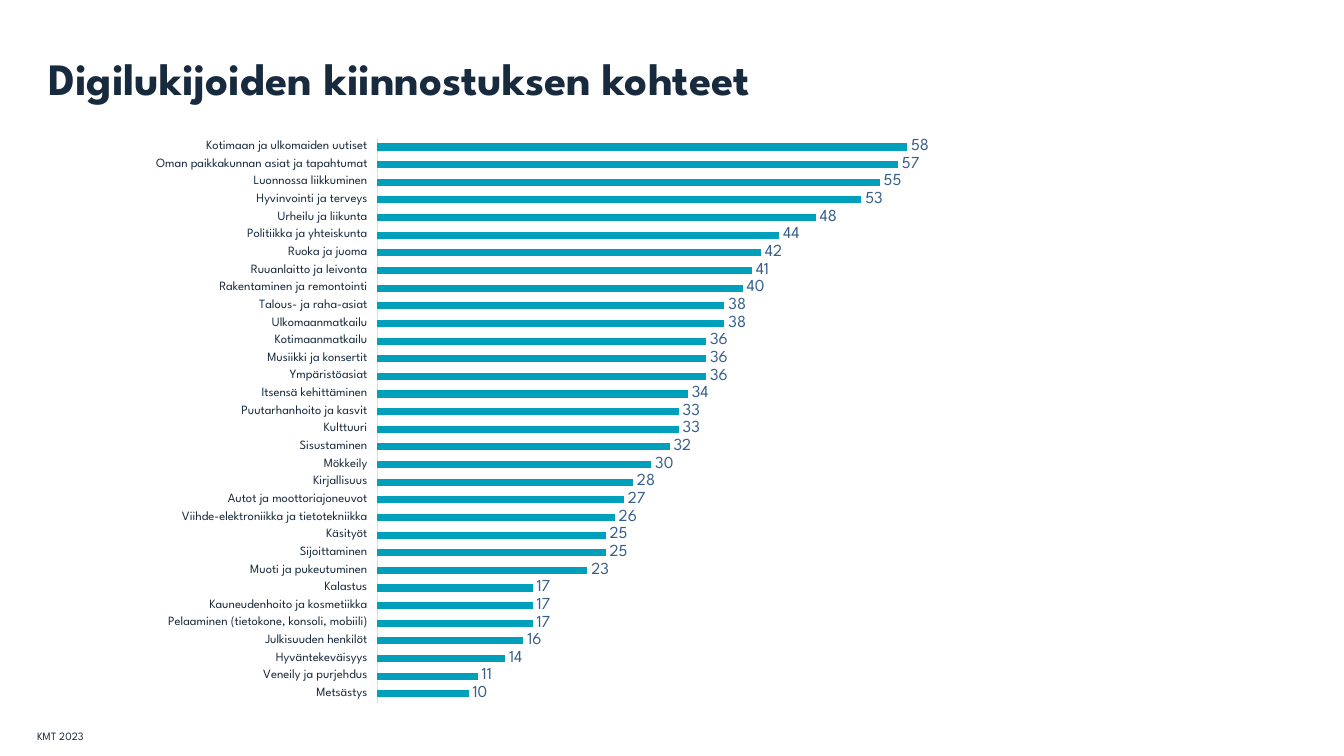
from dataclasses import dataclass

from pptx import Presentation
from pptx.chart.data import CategoryChartData
from pptx.dml.color import RGBColor as RGB
from pptx.enum.chart import (XL_CHART_TYPE as ChartType, XL_LABEL_POSITION as LabelPos,
                             XL_TICK_LABEL_POSITION as TickLabel, XL_TICK_MARK as Tick)
from pptx.enum.text import MSO_ANCHOR as Anchor
from pptx.oxml import parse_xml
from pptx.oxml.ns import nsdecls
from pptx.util import Inches, Pt

WIDTH, HEIGHT = Inches(13.33), Inches(7.5)


@dataclass(frozen=True)
class Theme:
    font: str = "League Spartan"
    ink: str = "182A3D"
    bar: str = "00A0BD"
    value: str = "365E89"
    axis: str = "D1DFED"
    title_size: float = 32
    value_size: float = 12
    chart_size: float = 10
    category_size: float = 9
    source_size: float = 8


THEME = Theme()

INTERESTS = {
    "Kotimaan ja ulkomaiden uutiset": 58,
    "Oman paikkakunnan asiat ja tapahtumat": 57,
    "Luonnossa liikkuminen": 55,
    "Hyvinvointi ja terveys": 53,
    "Urheilu ja liikunta": 48,
    "Politiikka ja yhteiskunta": 44,
    "Ruoka ja juoma": 42,
    "Ruuanlaitto ja leivonta": 41,
    "Rakentaminen ja remontointi": 40,
    "Talous- ja raha-asiat": 38,
    "Ulkomaanmatkailu": 38,
    "Kotimaanmatkailu": 36,
    "Musiikki ja konsertit": 36,
    "Ympäristöasiat": 36,
    "Itsensä kehittäminen": 34,
    "Puutarhanhoito ja kasvit": 33,
    "Kulttuuri": 33,
    "Sisustaminen": 32,
    "Mökkeily": 30,
    "Kirjallisuus": 28,
    "Autot ja moottoriajoneuvot": 27,
    "Viihde-elektroniikka ja tietotekniikka": 26,
    "Käsityöt": 25,
    "Sijoittaminen": 25,
    "Muoti ja pukeutuminen": 23,
    "Kalastus": 17,
    "Kauneudenhoito ja kosmetiikka": 17,
    "Pelaaminen (tietokone, konsoli, mobiili)": 17,
    "Julkisuuden henkilöt": 16,
    "Hyväntekeväisyys": 14,
    "Veneily ja purjehdus": 11,
    "Metsästys": 10,
}


def area(left, top, width, height):
    """Turn percentages of the slide's width and height into lengths."""
    return [int(side * share / 100) for side, share in
            zip((WIDTH, HEIGHT, WIDTH, HEIGHT), (left, top, width, height))]


def style_font(font, size, color=THEME.ink, bold=False):
    font.name, font.size, font.bold = THEME.font, Pt(size), bold
    font.color.rgb = RGB.from_string(color)


def add_text(slide, text, box, size, bold=False, anchor=Anchor.TOP, inset=None):
    tf = slide.shapes.add_textbox(*box).text_frame
    tf.word_wrap = True
    tf.vertical_anchor = anchor
    if inset is not None:
        tf.margin_left = tf.margin_top = tf.margin_right = tf.margin_bottom = inset
    tf.text = text
    style_font(tf.paragraphs[0].runs[0].font, size, bold=bold)


def set_plot_area(chart, x, y, w, h):
    """Fix the inner plot area, in shares of the chart's size."""
    plot_area = chart._chartSpace.chart.plotArea
    for layout in plot_area.findall("{*}layout"):
        plot_area.remove(layout)
    sizes = "".join(f'<c:{tag} val="{val}"/>' for tag, val in zip("xywh", (x, y, w, h)))
    plot_area.insert(0, parse_xml(
        f'<c:layout {nsdecls("c")}><c:manualLayout><c:layoutTarget val="inner"/>'
        f'<c:xMode val="edge"/><c:yMode val="edge"/>{sizes}</c:manualLayout></c:layout>'))


def style_axes(chart):
    cat, val = chart.category_axis, chart.value_axis
    cat.reverse_order = True
    cat.major_tick_mark = cat.minor_tick_mark = Tick.NONE
    cat.tick_label_position = TickLabel.LOW
    cat.format.line.color.rgb = RGB.from_string(THEME.axis)
    cat.format.line.width = Pt(0.75)
    style_font(cat.tick_labels.font, THEME.category_size)
    val.minimum_scale, val.maximum_scale = 0, 70
    val.has_major_gridlines = False
    val.visible = False


def add_bar_chart(slide, values, box):
    data = CategoryChartData(number_format="0")
    data.categories = values.keys()
    data.add_series("Series 1", values.values())
    chart = slide.shapes.add_chart(ChartType.BAR_CLUSTERED, *box, data).chart
    chart.has_legend = chart.has_title = False
    style_font(chart.font, THEME.chart_size)
    style_axes(chart)
    set_plot_area(chart, 0.283, 0.055, 0.672, 0.902)

    plot = chart.plots[0]
    plot.gap_width = 150
    plot.vary_by_categories = False
    fill = plot.series[0].format.fill
    fill.solid()
    fill.fore_color.rgb = RGB.from_string(THEME.bar)

    labels = plot.series[0].data_labels
    labels.show_value = True
    labels.position = LabelPos.OUTSIDE_END
    style_font(labels.font, THEME.value_size, THEME.value)


def main():
    prs = Presentation()
    prs.slide_width, prs.slide_height = WIDTH, HEIGHT
    slide = prs.slides.add_slide(prs.slide_layouts[6])
    add_text(slide, "Digilukijoiden kiinnostuksen kohteet", area(3.6, 6.67, 92.72, 10.8),
             THEME.title_size, bold=True, inset=0)
    add_text(slide, "KMT 2023", area(2.03, 94.67, 7.88, 5.33),
             THEME.source_size, anchor=Anchor.MIDDLE)
    add_bar_chart(slide, INTERESTS, area(8.03, 13.73, 70.82, 82.8))
    prs.save("out.pptx")


if __name__ == "__main__":
    main()
